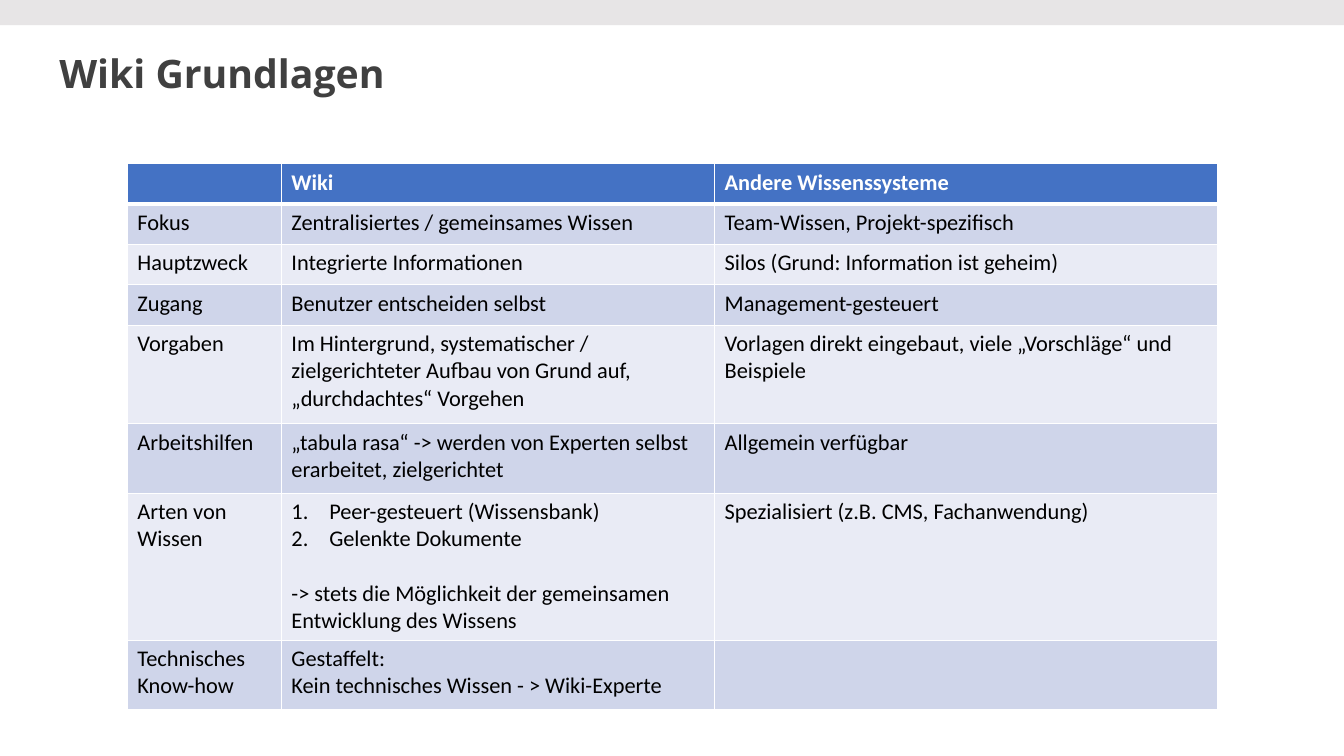
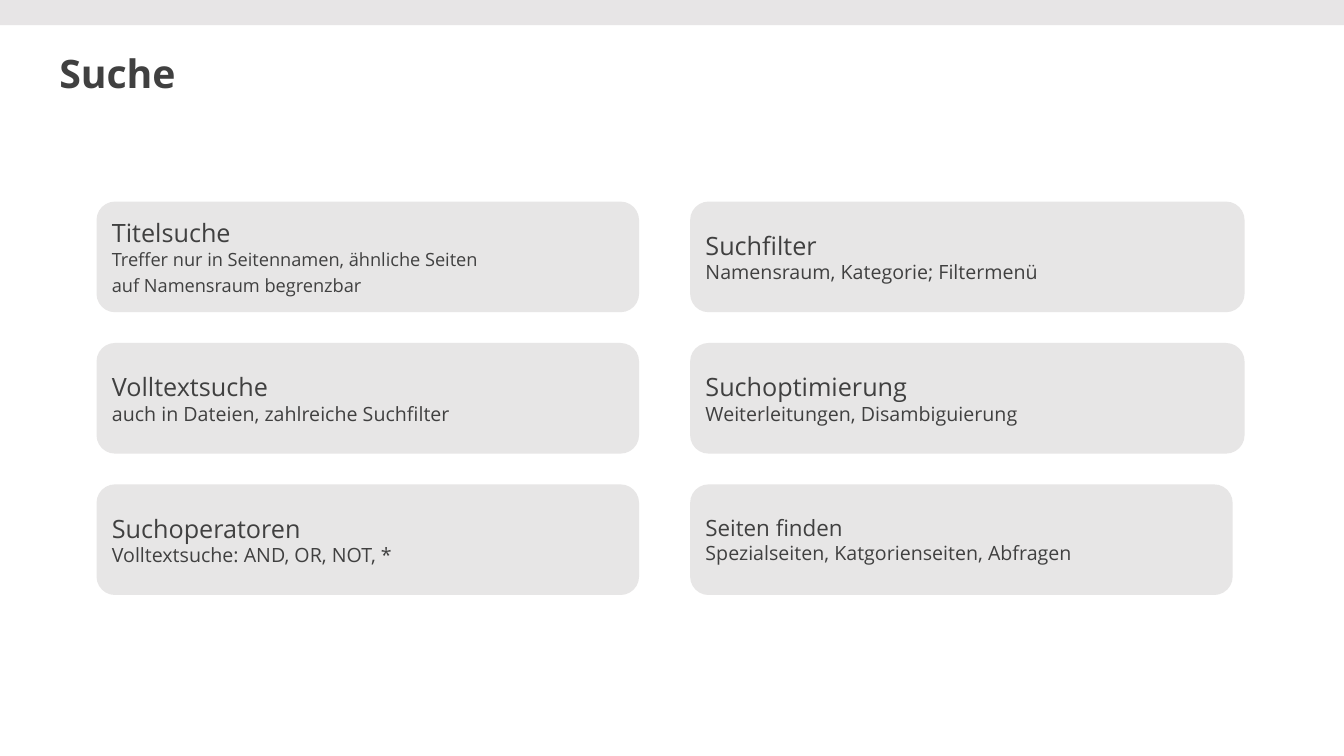
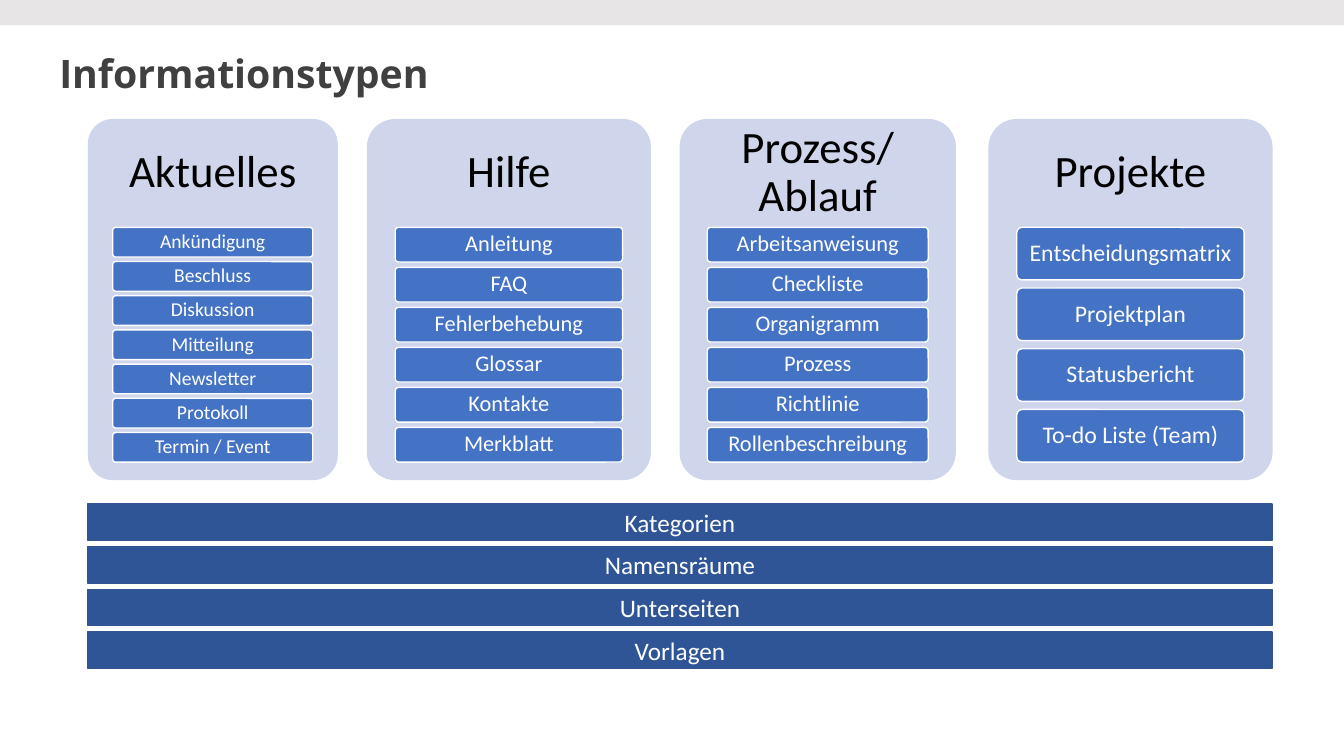
from dataclasses import dataclass

from lxml import etree
from pptx import Presentation
from pptx.dml.color import RGBColor
from pptx.enum.shapes import MSO_SHAPE
from pptx.enum.text import MSO_ANCHOR, PP_ALIGN
from pptx.oxml.ns import qn
from pptx.shapes.autoshape import Shape
from pptx.slide import Slide
from pptx.table import _Cell
from pptx.util import Pt

RECT, ROUNDED = MSO_SHAPE.RECTANGLE, MSO_SHAPE.ROUNDED_RECTANGLE
MIDDLE = MSO_ANCHOR.MIDDLE
LEFT, CENTER = PP_ALIGN.LEFT, PP_ALIGN.CENTER


@dataclass(frozen=True)
class Theme:
    heading_font: str = "Open Sans"
    body_font: str = "Calibri"
    band: str = "E7E5E6"
    card: str = "E7E6E6"
    dark: str = "404040"
    black: str = "000000"
    white: str = "FFFFFF"
    accent: str = "4472C4"
    row_odd: str = "CFD5EA"
    row_even: str = "E9EBF5"
    bar: str = "2F5597"
    bar_line: str = "325494"
    title_size: float = 28
    table_size: float = 16
    panel_size: float = 32
    bar_size: float = 18


@dataclass(frozen=True)
class Box:
    left: float
    top: float
    width: float
    height: float

    def lengths(self) -> tuple[Pt, Pt, Pt, Pt]:
        return Pt(self.left), Pt(self.top), Pt(self.width), Pt(self.height)


@dataclass(frozen=True)
class SearchCard:
    heading: str
    detail: str
    box: Box
    heading_size: float = 18
    detail_size: float = 14


@dataclass(frozen=True)
class Panel:
    heading: str
    items: tuple[str, ...]
    left: float
    width: float
    item_size: float


THEME = Theme()
SLIDE_WIDTH, SLIDE_HEIGHT = 960, 540
TITLE_BOX = Box(35.3, 36, 765, 36.7)

TABLE_BOX = Box(91, 117, 779, 389)
COLUMN_WIDTHS = (110, 309.5, 359.5)
ROW_HEIGHTS = (28.8, 28.8, 28.8, 28.8, 70.5, 49.5, 105, 49.5)
TABLE_ROWS = (
    ("", "Wiki", "Andere Wissenssysteme"),
    ("Fokus", "Zentralisiertes / gemeinsames Wissen",
     "Team-Wissen, Projekt-spezifisch"),
    ("Hauptzweck", "Integrierte Informationen",
     "Silos (Grund: Information ist geheim)"),
    ("Zugang", "Benutzer entscheiden selbst", "Management-gesteuert"),
    ("Vorgaben",
     "Im Hintergrund, systematischer / zielgerichteter Aufbau von Grund auf, "
     "„durchdachtes“ Vorgehen",
     "Vorlagen direkt eingebaut, viele „Vorschläge“ und Beispiele"),
    ("Arbeitshilfen",
     "„tabula rasa“ -> werden von Experten selbst erarbeitet, zielgerichtet",
     "Allgemein verfügbar"),
    ("Arten von Wissen",
     "Peer-gesteuert (Wissensbank)\nGelenkte Dokumente\n"
     "-> stets die Möglichkeit der gemeinsamen Entwicklung des Wissens",
     "Spezialisiert (z.B. CMS, Fachanwendung)"),
    ("Technisches Know-how",
     "Gestaffelt:\nKein technisches Wissen - > Wiki-Experte", ""),
)
KNOWLEDGE_KINDS_CELL = (6, 1)

CARD_LEFT, CARD_RIGHT = 69, 493
CARD_WIDTH, CARD_WIDE, CARD_HEIGHT = 387.5, 396, 79
CARD_TOPS = (144, 245, 346)
SEARCH_CARDS = tuple(
    SearchCard(heading, detail, Box(left, CARD_TOPS[row], width, CARD_HEIGHT), *sizes)
    for heading, detail, left, row, width, sizes in (
        ("Titelsuche",
         "Treffer nur in Seitennamen, ähnliche Seiten\nauf Namensraum begrenzbar",
         CARD_LEFT, 0, CARD_WIDTH, (18, 13)),
        ("Volltextsuche", "auch in Dateien, zahlreiche Suchfilter",
         CARD_LEFT, 1, CARD_WIDTH, ()),
        ("Suchoperatoren", "Volltextsuche: AND, OR, NOT, *",
         CARD_LEFT, 2, CARD_WIDTH, ()),
        ("Suchfilter", "Namensraum, Kategorie; Filtermenü",
         CARD_RIGHT, 0, CARD_WIDE, ()),
        ("Suchoptimierung", "Weiterleitungen, Disambiguierung",
         CARD_RIGHT, 1, CARD_WIDE, ()),
        ("Seiten finden", "Spezialseiten, Katgorienseiten, Abfragen",
         CARD_RIGHT, 2, CARD_WIDTH, (16, 14)),
    )
)

PANEL_TOP, PANEL_HEIGHT = 85, 258
HEADING_SHARE, ITEMS_SHARE = 0.3, 0.65
ITEM_INSET_SHARE, ITEM_GAP_SHARE = 0.1, 0.154
PANELS = (
    Panel("Aktuelles",
          ("Ankündigung", "Beschluss", "Diskussion", "Mitteilung", "Newsletter",
           "Protokoll", "Termin / Event"), 62.7, 178.6, 14),
    Panel("Hilfe",
          ("Anleitung", "FAQ", "Fehlerbehebung", "Glossar", "Kontakte", "Merkblatt"),
          262, 203, 16),
    Panel("Prozess/\nAblauf",
          ("Arbeitsanweisung", "Checkliste", "Organigramm", "Prozess", "Richtlinie",
           "Rollenbeschreibung"), 485.5, 197.3, 16),
    Panel("Projekte",
          ("Entscheidungsmatrix", "Projektplan", "Statusbericht", "To-do Liste (Team)"),
          706, 203, 17),
)
STRUCTURE_BARS = ("Kategorien", "Namensräume", "Unterseiten", "Vorlagen")
BAR_LEFT, BAR_TOP, BAR_WIDTH, BAR_HEIGHT, BAR_PITCH = 62.7, 360, 846, 26, 30.5


def rgb(color: str) -> RGBColor:
    return RGBColor.from_string(color)


def format_paragraph(paragraph, font: str, size: float, color: str,
                     bold: bool = False, align=LEFT) -> None:
    paragraph.alignment = align
    for run in paragraph.runs:
        run.font.name = font
        run.font.size = Pt(size)
        run.font.color.rgb = rgb(color)
        run.font.bold = bold


def add_filled(slide: Slide, preset, box: Box, fill: str, line: str | None = None) -> Shape:
    shape = slide.shapes.add_shape(preset, *box.lengths())
    shape.shadow.inherit = False
    shape.fill.solid()
    shape.fill.fore_color.rgb = rgb(fill)
    if line:
        shape.line.color.rgb = rgb(line)
        shape.line.width = Pt(1)
    else:
        shape.line.fill.background()
    return shape


def write_centered(shape: Shape, text: str, size: float, color: str,
                   margin: float, spacing: float = 1) -> None:
    frame = shape.text_frame
    frame.word_wrap = True
    frame.vertical_anchor = MIDDLE
    frame.margin_left = frame.margin_right = Pt(margin)
    frame.margin_top = frame.margin_bottom = Pt(0)
    frame.text = text
    for paragraph in frame.paragraphs:
        format_paragraph(paragraph, THEME.body_font, size, color, align=CENTER)
        paragraph.line_spacing = spacing


def add_titled_slide(prs, title: str) -> Slide:
    slide = prs.slides.add_slide(prs.slide_layouts[6])
    add_filled(slide, RECT, Box(0, 0, SLIDE_WIDTH, 18), THEME.band)
    frame = slide.shapes.add_textbox(*TITLE_BOX.lengths()).text_frame
    frame.word_wrap = True
    frame.vertical_anchor = MIDDLE
    frame.text = title
    heading = frame.paragraphs[0]
    heading.line_spacing = 0.9
    format_paragraph(heading, THEME.heading_font, THEME.title_size, THEME.dark, bold=True)
    return slide


def add_cell_borders(cell: _Cell, header: bool) -> None:
    properties = cell._tc.get_or_add_tcPr()
    for side in ("lnL", "lnR", "lnT", "lnB"):
        width = 3 if header and side == "lnB" else 1
        line = etree.SubElement(properties, qn(f"a:{side}"), w=str(Pt(width)))
        fill = etree.SubElement(line, qn("a:solidFill"))
        etree.SubElement(fill, qn("a:srgbClr"), val=THEME.white)


def number_paragraph(paragraph) -> None:
    properties = paragraph._p.get_or_add_pPr()
    properties.set("marL", str(Pt(27)))
    properties.set("indent", str(Pt(-27)))
    etree.SubElement(properties, qn("a:buFont"), typeface="+mj-lt")
    etree.SubElement(properties, qn("a:buAutoNum"), type="arabicPeriod")


def fill_cell(cell: _Cell, text: str, row: int) -> None:
    header = row == 0
    add_cell_borders(cell, header)
    cell.fill.solid()
    body_fill = THEME.row_odd if row % 2 else THEME.row_even
    cell.fill.fore_color.rgb = rgb(THEME.accent if header else body_fill)
    cell.text_frame.text = text
    for paragraph in cell.text_frame.paragraphs:
        format_paragraph(paragraph, THEME.body_font, THEME.table_size,
                         THEME.white if header else THEME.black, bold=header)


def build_basics(prs) -> None:
    slide = add_titled_slide(prs, "Wiki Grundlagen")
    table = slide.shapes.add_table(
        len(ROW_HEIGHTS), len(COLUMN_WIDTHS), *TABLE_BOX.lengths()).table
    for column, width in zip(table.columns, COLUMN_WIDTHS):
        column.width = Pt(width)
    for row, (height, texts) in enumerate(zip(ROW_HEIGHTS, TABLE_ROWS)):
        table.rows[row].height = Pt(height)
        for column, text in enumerate(texts):
            fill_cell(table.cell(row, column), text, row)
    *kinds, remark = table.cell(*KNOWLEDGE_KINDS_CELL).text_frame.paragraphs
    for kind in kinds:
        number_paragraph(kind)
    remark.space_before = Pt(19.5)


def add_search_card(slide: Slide, card: SearchCard) -> None:
    frame = add_filled(slide, ROUNDED, card.box, THEME.card).text_frame
    frame.word_wrap = True
    frame.vertical_anchor = MIDDLE
    frame.text = f"{card.heading}\n{card.detail}"
    heading, *details = frame.paragraphs
    format_paragraph(heading, THEME.heading_font, card.heading_size, THEME.dark)
    for detail in details:
        format_paragraph(detail, THEME.heading_font, card.detail_size, THEME.dark)
    for further_detail in details[1:]:
        further_detail.space_before = Pt(3)


def build_search(prs) -> None:
    slide = add_titled_slide(prs, "Suche")
    for card in SEARCH_CARDS:
        add_search_card(slide, card)


def add_panel(slide: Slide, panel: Panel) -> None:
    """Draw a panel whose items share its lower part evenly."""
    backdrop = add_filled(
        slide, ROUNDED, Box(panel.left, PANEL_TOP, panel.width, PANEL_HEIGHT), THEME.row_odd)
    backdrop.adjustments[0] = 0.1
    heading_height = PANEL_HEIGHT * HEADING_SHARE
    heading = slide.shapes.add_textbox(
        *Box(panel.left, PANEL_TOP, panel.width, heading_height).lengths())
    write_centered(heading, panel.heading, THEME.panel_size, THEME.black, 9, 0.9)

    count = len(panel.items)
    item_height = PANEL_HEIGHT * ITEMS_SHARE / (count + (count - 1) * ITEM_GAP_SHARE)
    item_pitch = item_height * (1 + ITEM_GAP_SHARE)
    inset = panel.width * ITEM_INSET_SHARE
    for index, text in enumerate(panel.items):
        box = Box(panel.left + inset, PANEL_TOP + heading_height + index * item_pitch,
                  panel.width - 2 * inset, item_height)
        item = add_filled(slide, ROUNDED, box, THEME.accent, THEME.white)
        item.adjustments[0] = 0.1
        write_centered(item, text, panel.item_size, THEME.white, 3, 0.9)


def build_information_types(prs) -> None:
    slide = add_titled_slide(prs, "Informationstypen")
    for panel in PANELS:
        add_panel(slide, panel)
    for index, text in enumerate(STRUCTURE_BARS):
        box = Box(BAR_LEFT, BAR_TOP + index * BAR_PITCH, BAR_WIDTH, BAR_HEIGHT)
        bar = add_filled(slide, RECT, box, THEME.bar, THEME.bar_line)
        write_centered(bar, text, THEME.bar_size, THEME.white, 7.2)


def main() -> None:
    prs = Presentation()
    prs.slide_width, prs.slide_height = Pt(SLIDE_WIDTH), Pt(SLIDE_HEIGHT)
    build_basics(prs)
    build_search(prs)
    build_information_types(prs)
    prs.save("out.pptx")


if __name__ == "__main__":
    main()
